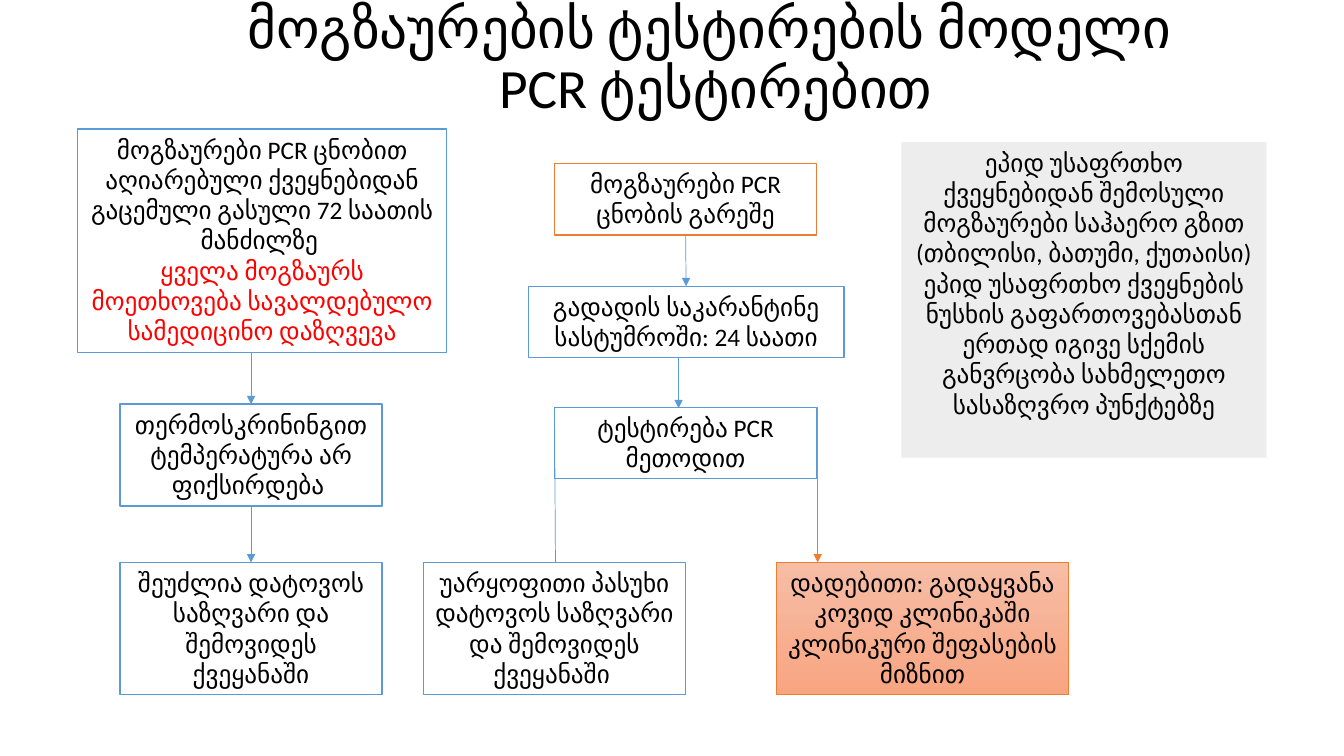
from dataclasses import dataclass

from lxml import etree
from pptx import Presentation
from pptx.dml.color import RGBColor
from pptx.enum.shapes import MSO_CONNECTOR, MSO_SHAPE
from pptx.enum.text import MSO_ANCHOR, MSO_AUTO_SIZE, PP_ALIGN
from pptx.oxml.ns import qn
from pptx.util import Inches, Pt

RECT = MSO_SHAPE.RECTANGLE
STRAIGHT = MSO_CONNECTOR.STRAIGHT
TOP, MIDDLE = MSO_ANCHOR.TOP, MSO_ANCHOR.MIDDLE
CENTER = PP_ALIGN.CENTER
NO_FIT = MSO_AUTO_SIZE.NONE
UPPER, LOWER = 0, 2


@dataclass(frozen=True)
class Theme:
    font: str = "Calibri"
    title: float = 39.6
    body: float = 18
    black: str = "000000"
    red: str = "FF0000"
    white: str = "FFFFFF"
    blue: str = "5B9BD5"
    orange: str = "ED7D31"
    gray: str = "EDEDED"
    peach: tuple = ("F7BDA5", "F8A582")
    thick: float = 1
    thin: float = 0.5


THEME = Theme()


def color(code):
    return RGBColor.from_string(code)


def write(frame, lines, size, anchor=TOP, space=None):
    """Fill a text frame with centred (text, colour) paragraphs."""
    look = {"word_wrap": True, "auto_size": NO_FIT, "vertical_anchor": anchor}
    for name, value in look.items():
        setattr(frame, name, value)
    for i, (text, tint) in enumerate(lines):
        para = frame.paragraphs[0] if i == 0 else frame.add_paragraph()
        para.text = text
        para.alignment = CENTER
        para.line_spacing = space
        for run in para.runs:
            for name, value in {"name": THEME.font, "size": Pt(size)}.items():
                setattr(run.font, name, value)
            run.font.color.rgb = color(tint)


def add_box(slide, box, *lines, fill=THEME.white, line=THEME.blue,
            width=THEME.thick):
    """Add a text box; a pair of fill colours gives a downward gradient."""
    shape = slide.shapes.add_shape(RECT, *map(Inches, box))
    shape.shadow.inherit = False
    if isinstance(fill, tuple):
        shape.fill.gradient()
        shape.fill.gradient_angle = 270
        for stop, code in zip(shape.fill.gradient_stops, fill):
            stop.color.rgb = color(code)
    else:
        shape.fill.solid()
        shape.fill.fore_color.rgb = color(fill)
    if line:
        shape.line.color.rgb = color(line)
        shape.line.width = Pt(width)
    else:
        shape.line.fill.background()
    pairs = [(x, THEME.black) if isinstance(x, str) else x for x in lines]
    write(shape.text_frame, pairs, THEME.body)
    return shape


def add_arrow(slide, start, end, tint=THEME.blue, above=None, below=None):
    """Add an arrow, joined to the box above or below where one is given."""
    link = slide.shapes.add_connector(STRAIGHT, *map(Inches, start + end))
    if above:
        link.begin_connect(above, LOWER)
    if below:
        link.end_connect(below, UPPER)
    link.line.color.rgb = color(tint)
    link.line.width = Pt(THEME.thin)
    etree.SubElement(link.line._get_or_add_ln(), qn("a:tailEnd"),
                     type="triangle")
    etree.SubElement(link._element.spPr, qn("a:effectLst"))


def add_title(slide, box):
    title = slide.shapes.title
    for name, value in zip(("left", "top", "width", "height"), box):
        setattr(title, name, Inches(value))
    text = "მოგზაურების ტესტირების მოდელი \nPCR ტესტირებით"
    write(title.text_frame, [(text, THEME.black)], THEME.title, MIDDLE, 0.9)


def add_entry(slide, box):
    """Left column: travellers who hold a PCR certificate."""
    x, y, w, h = box
    side, wide = x + 0.42, 2.6
    mid = side + wide / 2
    add_box(slide, (x, y, w, 2.22),
            "მოგზაურები PCR ცნობით აღიარებული ქვეყნებიდან "
            "გაცემული გასული 72 საათის მანძილზე ",
            ("ყველა მოგზაურს მოეთხოვება სავალდებულო "
             "სამედიცინო დაზღვევა", THEME.red))
    scan = add_box(slide, (side, y + 2.73, wide, 1.01),
                   "თერმოსკრინინგით ტემპერატურა არ ფიქსირდება ")
    leave = add_box(slide, (side, y + h - 1.31, wide, 1.31),
                    "შეუძლია დატოვოს საზღვარი და შემოვიდეს ქვეყანაში")
    add_arrow(slide, (mid, y + 2.22), (mid, y + 2.73), below=scan)
    add_arrow(slide, (mid, y + 3.74), (mid, y + h - 1.31),
              above=scan, below=leave)


def add_test(slide, box):
    """Middle column: quarantine, test and its two outcomes."""
    x, y, w, h = box
    wide, high, last = 2.6, 0.71, 1.31
    left, mid, base = x + 1.3, x + 2.6, y + h - last
    right = left + wide
    none = add_box(slide, (left, y, wide, high),
                   "მოგზაურები PCR ცნობის გარეშე", line=THEME.orange)
    hotel = add_box(slide, (x + 1.04, y + 1.22, 3.13, high),
                    "გადადის საკარანტინე სასტუმროში: 24 საათი")
    add_box(slide, (left, y + 2.42, wide, high), "ტესტირება PCR მეთოდით")
    add_arrow(slide, (mid, y + high), (mid, y + 1.22),
              above=none, below=hotel)
    add_arrow(slide, (mid - 0.07, y + 1.93), (mid - 0.07, y + 2.43))

    # Outcomes
    add_arrow(slide, (left, y + 2.46), (left + 0.01, base + 0.12))
    add_box(slide, (x, base, wide, last),
            "უარყოფითი პასუხი დატოვოს საზღვარი და შემოვიდეს ქვეყანაში ")
    add_box(slide, (x + w - 2.9, base, 2.9, last),
            "დადებითი: გადაყვანა კოვიდ კლინიკაში კლინიკური შეფასების მიზნით",
            fill=THEME.peach, line=THEME.orange, width=THEME.thin)
    add_arrow(slide, (right + 0.01, y + 2.42), (right + 0.01, base),
              THEME.orange)


def add_note(slide, box):
    """Right panel: travellers from safe countries."""
    add_box(slide, box,
            "ეპიდ უსაფრთხო ქვეყნებიდან შემოსული მოგზაურები საჰაერო გზით "
            "(თბილისი, ბათუმი, ქუთაისი)",
            "ეპიდ უსაფრთხო ქვეყნების ნუსხის გაფართოვებასთან ერთად იგივე "
            "სქემის განვრცობა სახმელეთო სასაზღვრო პუნქტებზე",
            fill=THEME.gray, line=None)


def main():
    deck = Presentation()
    deck.slide_width, deck.slide_height = Inches(13.33), Inches(7.5)
    slide = deck.slides.add_slide(deck.slide_layouts[5])
    add_title(slide, (1.35, 0.09, 11.5, 1.02))
    add_entry(slide, (0.77, 1.28, 3.66, 5.61))
    add_test(slide, (4.2, 1.62, 6.4, 5.27))
    add_note(slide, (8.94, 1.41, 3.62, 3.13))
    deck.save("out.pptx")


if __name__ == "__main__":
    main()
